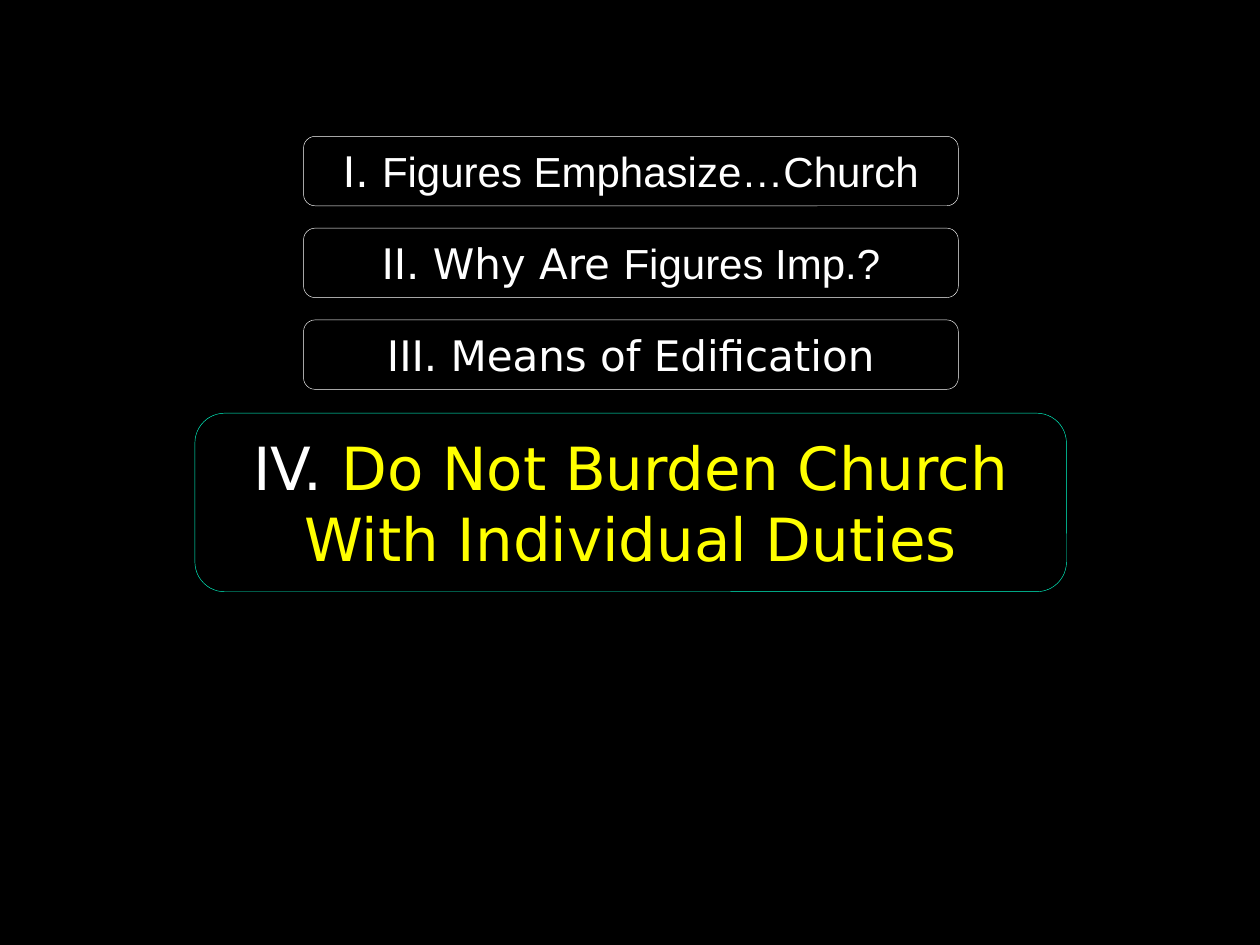
from pptx import Presentation
from pptx import util as u
from pptx.dml.color import RGBColor
from pptx.enum import shapes, text

HUES = {"black": "000000", "white": "FFFFFF", "mint": "00FFCC", "yellow": "FFFF00"}
SANS, ARIAL = "DejaVu Sans", "Arial"

# Small boxes: runs of (words, font, colour)
HEADS = [
    [("I. ", SANS, "white"), ("Figures Emphasize…Church", ARIAL, "white")],
    [("II. Why Are ", SANS, "white"), ("Figures Imp.?", ARIAL, "white")],
    [("III. Means of Edification", SANS, "white")],
]
# Current point
POINT = [("IV. ", SANS, "white"),
         ("Do Not Burden Church With Individual Duties", SANS, "yellow")]


def hue(name):
    return RGBColor.from_string(HUES[name])


def put(obj, vals):
    for key, val in vals.items():
        setattr(obj, key, val)


def paint(fill, name):
    fill.solid()
    fill.fore_color.rgb = hue(name)


def add_run(para, words, font, tint, size):
    run = para.add_run()
    run.text = words
    put(run.font, {"name": font, "size": u.Pt(size)})
    run.font.color.rgb = hue(tint)


def add_box(slide, spot, runs, size, edge):
    box = slide.shapes.add_shape(shapes.MSO_SHAPE.ROUNDED_RECTANGLE,
                                 *(u.Cm(val) for val in spot))
    box.shadow.inherit = False
    paint(box.fill, "black")
    paint(box.line.fill, edge)
    box.line.width = u.Pt(0.25)
    frame = box.text_frame
    put(frame, {"word_wrap": True, "vertical_anchor": text.MSO_ANCHOR.MIDDLE})
    para = frame.paragraphs[0]
    para.alignment = text.PP_ALIGN.CENTER
    for words, font, tint in runs:
        add_run(para, words, font, tint, size)


def main():
    deck = Presentation()
    put(deck, {"slide_width": u.Cm(25.4), "slide_height": u.Cm(19.05)})
    slide = deck.slides.add_slide(deck.slide_layouts[6])
    paint(slide.background.fill, "black")

    # Outline of earlier points, evenly stacked
    for row, runs in enumerate(HEADS):
        add_box(slide, (6.12, 2.75 + 1.85 * row, 13.2, 1.4), runs, 24, "white")

    # Large box for the current point
    add_box(slide, (3.93, 8.33, 17.57, 3.6), POINT, 34, "mint")

    deck.save("out.pptx")


if __name__ == "__main__":
    main()
